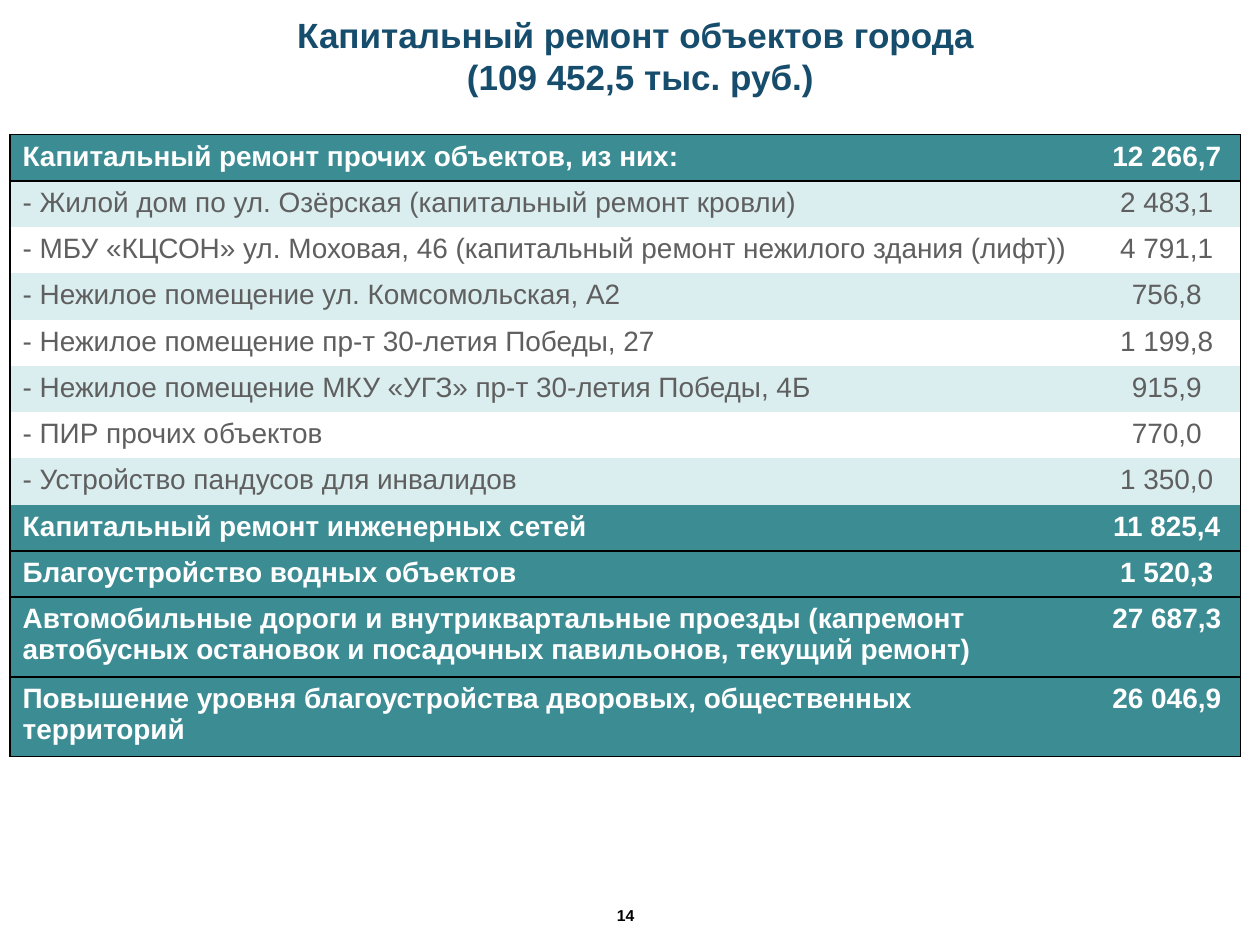
from pptx import Presentation
from pptx.dml.color import RGBColor as RGB
from pptx.enum.text import MSO_ANCHOR as Anchor, PP_ALIGN as Align
from pptx.oxml.ns import qn
from pptx.util import Pt
from lxml.etree import SubElement as Sub

HUES = {"title": "164C6C", "head": "3C8C93", "band": "DAEDEF",
        "body": "5F5F5F", "white": "FFFFFF", "black": "000000"}

ROWS = [
    ("Капитальный ремонт прочих объектов, из них:", "12 266,7"),
    ("- Жилой дом по ул. Озёрская (капитальный ремонт кровли)", "2 483,1"),
    ("- МБУ «КЦСОН» ул. Моховая, 46 (капитальный ремонт нежилого здания (лифт))", "4 791,1"),
    ("- Нежилое помещение ул. Комсомольская, А2", "756,8"),
    ("- Нежилое помещение пр-т 30-летия Победы, 27", "1 199,8"),
    ("- Нежилое помещение МКУ «УГЗ» пр-т 30-летия Победы, 4Б", "915,9"),
    ("- ПИР прочих объектов", "770,0"),
    ("- Устройство пандусов для инвалидов", "1 350,0"),
    ("Капитальный ремонт инженерных сетей", "11 825,4"),
    ("Благоустройство водных объектов", "1 520,3"),
    ("Автомобильные дороги и внутриквартальные проезды (капремонт автобусных "
     "остановок и посадочных павильонов, текущий ремонт)", "27 687,3"),
    ("Повышение уровня благоустройства дворовых, общественных территорий", "26 046,9"),
]


class Deck:
    """Hold the style and the current slide, and draw each kind of element."""

    def __init__(self, wide, high, face="Arial"):
        self.file = Presentation()
        self.file.slide_width, self.file.slide_height = Pt(wide), Pt(high)
        self.slide = self.file.slides.add_slide(self.file.slide_layouts[6])
        self.face = face

    def style(self, frame, size, hue, bold, align):
        for para in frame.paragraphs:
            para.alignment = align
            for run in para.runs:
                font = run.font
                font.name, font.size, font.bold = self.face, Pt(size), bold
                font.color.rgb = RGB.from_string(HUES[hue])

    def text(self, words, box, size, hue):
        frame = self.slide.shapes.add_textbox(*map(Pt, box)).text_frame
        frame.word_wrap = True
        frame.vertical_anchor = Anchor.MIDDLE
        frame.text = words
        self.style(frame, size, hue, True, Align.CENTER)

    def edges(self, cell, shown):
        props = cell._tc.get_or_add_tcPr()
        for side in "LRTB":
            line = Sub(props, qn("a:ln" + side), w=str(Pt(1)))
            if side in shown:
                Sub(Sub(line, qn("a:solidFill")), qn("a:srgbClr"), val=HUES["black"])
            else:
                Sub(line, qn("a:noFill"))

    def cell(self, cell, words, fill, hue, bold, align, shown):
        self.edges(cell, shown)
        if fill:
            cell.fill.solid()
            cell.fill.fore_color.rgb = RGB.from_string(HUES[fill])
        else:
            cell.fill.background()
        cell.text_frame.text = words
        self.style(cell.text_frame, 16, hue, bold, align)

    def table(self, rows, left, top, cols, high):
        box = map(Pt, (left, top, sum(cols), high * len(rows)))
        grid = self.slide.shapes.add_table(len(rows), len(cols), *box).table
        for col, wide in zip(grid.columns, cols):
            col.width = Pt(wide)
        heads = [not name.startswith("-") for name, _ in rows]
        for i, (pair, head) in enumerate(zip(rows, heads)):
            fill = "head" if head else "band" if i % 2 else None
            rules = ("T" if i == 0 or heads[i - 1] else "") + ("B" if head else "")
            for j, words in enumerate(pair):
                self.cell(grid.cell(i, j), words, fill, "white" if head else "body",
                          head, (Align.LEFT, Align.CENTER)[j], "LR"[j] + rules)


def main():
    deck = Deck(720, 540)
    deck.text("Капитальный ремонт объектов города \v(109 452,5 тыс. руб.)",
              (12, 14.5, 708, 34), 20, "title")
    deck.table(ROWS, 5.75, 77, (619, 84), 19)
    deck.text("14", (337.5, 514, 40, 18), 9, "black")
    deck.file.save("out.pptx")


if __name__ == "__main__":
    main()
